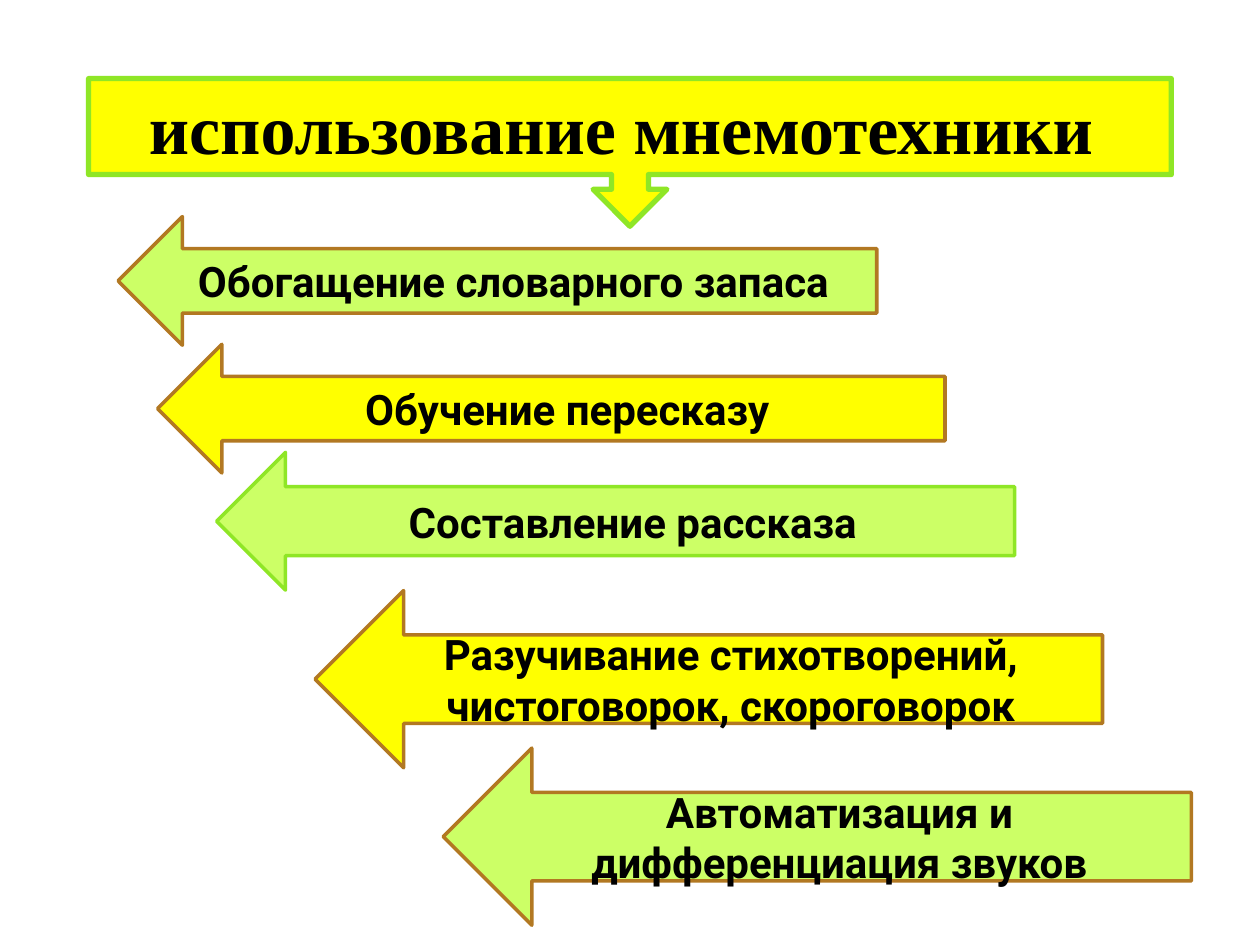
from pptx import Presentation
from pptx import util as u
from pptx.dml.color import RGBColor
from pptx.enum import shapes, text

Pt = u.Pt
COLOURS = {"yellow": "FFFF00", "lime": "CCFF66", "green": "8FE626",
           "brown": "B27822", "text": "000000"}

# Wording, fill, outline and box (left, top, width, height) of each arrow
USES = [
    ("Обогащение словарного запаса", "lime", "brown", (67.5, 123.75, 433.5, 73.5)),
    ("Обучение пересказу", "yellow", "brown", (90, 196.75, 450, 73.5)),
    ("Составление рассказа", "lime", "green", (123.75, 258.5, 456, 78.75)),
    ("Разучивание стихотворений, чистоговорок, скороговорок",
     "yellow", "brown", (180, 337.5, 450, 101.25)),
    ("Автоматизация и дифференциация звуков",
     "lime", "brown", (253.25, 427.5, 427.5, 101.25)),
]


def colour(name):
    return RGBColor.from_string(COLOURS[name])


def add_labelled_shape(page, kind, box, label, fill, line, width, font, size):
    shape = page.shapes.add_shape(kind, *[Pt(length) for length in box])
    shape.shadow.inherit = False
    shape.fill.solid()
    shape.fill.fore_color.rgb = colour(fill)
    shape.line.color.rgb = colour(line)
    shape.line.width = Pt(width)
    frame = shape.text_frame
    frame.word_wrap = True
    frame.vertical_anchor = text.MSO_ANCHOR.MIDDLE
    frame.text = label
    para = frame.paragraphs[0]
    para.alignment = text.PP_ALIGN.CENTER
    span = para.runs[0]
    span.font.name = font
    span.font.size = Pt(size)
    span.font.bold = True
    span.font.color.rgb = colour("text")
    return shape


def add_title(page, box):
    """Callout turned to point down, with its text turned back to level."""
    left, top, width, height = box
    turned = (left + (width - height) / 2, top + (height - width) / 2, height, width)
    callout = add_labelled_shape(
        page, shapes.MSO_SHAPE.RIGHT_ARROW_CALLOUT, turned,
        "использование мнемотехники ", "yellow", "green", 3, "Times New Roman", 40)
    callout.rotation = 90
    callout.text_frame._txBody.bodyPr.set("vert", "vert270")


def add_use(page, box, label, fill, line):
    add_labelled_shape(page, shapes.MSO_SHAPE.LEFT_ARROW, box,
                       label, fill, line, 2, "Roboto", 24)


def main():
    deck = Presentation()
    deck.slide_width, deck.slide_height = Pt(720), Pt(540)
    page = deck.slides.add_slide(deck.slide_layouts[6])

    # Title callout
    add_title(page, (50.6, 44.9, 618.75, 84.4))

    # Arrows stepping down to the right
    for label, fill, line, box in USES:
        add_use(page, box, label, fill, line)

    deck.save("out.pptx")


if __name__ == "__main__":
    main()
